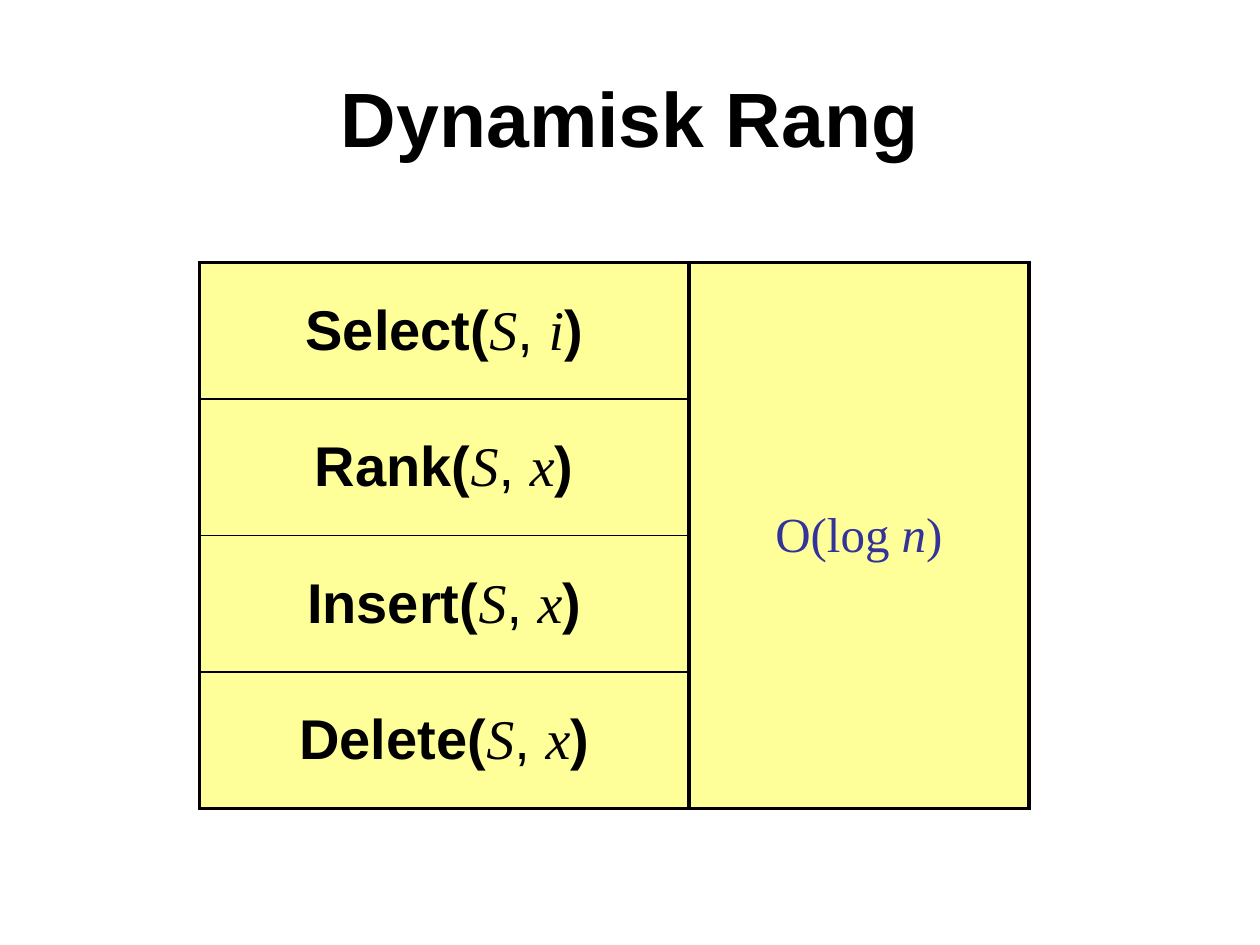
from dataclasses import dataclass

from lxml import etree
from pptx import Presentation
from pptx.dml.color import RGBColor
from pptx.enum import text
from pptx.oxml import ns
from pptx.util import Pt


@dataclass(frozen=True)
class Theme:
    ink: str = "000000"
    accent: str = "333399"
    panel: str = "FFFF99"
    sans: str = "Arial"
    serif: str = "Times New Roman"
    title: float = 44
    operation: float = 32
    bound: float = 28
    outer: float = 2.25
    inner: float = 1


THEME = Theme()
OPERATIONS = [("Select", "i"), ("Rank", "x"), ("Insert", "x"), ("Delete", "x")]


def add_run(p, content, *, size, font=THEME.sans, color=THEME.ink, bold=False, italic=False):
    r = p.add_run()
    r.text = content
    f = r.font
    f.size, f.name, f.bold, f.italic = Pt(size), font, bold, italic
    f.color.rgb = RGBColor.from_string(color)


def set_borders(cell, **widths):
    tc_pr = cell._tc.get_or_add_tcPr()
    for side in "LRTB":
        ln = etree.SubElement(tc_pr, ns.qn(f"a:ln{side}"), w=str(Pt(widths[side])))
        fill = etree.SubElement(ln, ns.qn("a:solidFill"))
        etree.SubElement(fill, ns.qn("a:srgbClr"), val=THEME.ink)


def format_cell(cell, **widths):
    set_borders(cell, **widths)
    cell.fill.solid()
    cell.fill.fore_color.rgb = RGBColor.from_string(THEME.panel)
    cell.vertical_anchor = text.MSO_ANCHOR.MIDDLE
    cell.margin_left = cell.margin_right = Pt(7.2)
    cell.margin_top = cell.margin_bottom = 0
    p = cell.text_frame.paragraphs[0]
    p.alignment = text.PP_ALIGN.CENTER
    return p


def add_title(s, content, x, y, w, h):
    sp = s.shapes.title
    sp.left, sp.top, sp.width, sp.height = Pt(x), Pt(y), Pt(w), Pt(h)
    tf = sp.text_frame
    tf.vertical_anchor = text.MSO_ANCHOR.MIDDLE
    p = tf.paragraphs[0]
    p.alignment = text.PP_ALIGN.CENTER
    add_run(p, content, size=THEME.title, bold=True)


def write_operation(p, name, argument):
    size = THEME.operation
    add_run(p, f"{name}(", size=size, bold=True)
    add_run(p, "S", size=size, font=THEME.serif, italic=True)
    add_run(p, ", ", size=size)
    add_run(p, argument, size=size, font=THEME.serif, italic=True)
    add_run(p, ")", size=size, bold=True)


def write_bound(p):
    for content, italic in [("O(log ", False), ("n", True), (")", False)]:
        add_run(p, content, size=THEME.bound, font=THEME.serif, color=THEME.accent, italic=italic)


def add_operations_table(s, x, y, w, h, name_share):
    count = len(OPERATIONS)
    table = s.shapes.add_table(count, 2, Pt(x), Pt(y), Pt(w), Pt(h)).table
    table.columns[0].width = Pt(w * name_share)
    table.columns[1].width = Pt(w * (1 - name_share))
    table.cell(0, 1).merge(table.cell(count - 1, 1))

    outer, inner = THEME.outer, THEME.inner
    for i, (name, argument) in enumerate(OPERATIONS):
        table.rows[i].height = Pt(h / count)
        top = outer if i == 0 else inner
        bottom = outer if i == count - 1 else inner
        p = format_cell(table.cell(i, 0), L=outer, R=outer, T=top, B=bottom)
        write_operation(p, name, argument)
        p = format_cell(table.cell(i, 1), L=outer, R=outer, T=outer, B=outer)
        if i == 0:
            write_bound(p)


def main():
    prs = Presentation()
    prs.slide_width, prs.slide_height = Pt(720), Pt(540)
    s = prs.slides.add_slide(prs.slide_layouts[5])
    add_title(s, "Dynamisk Rang", 36, 21.6, 648, 90)
    add_operations_table(s, 114, 150, 474, 312, 0.59)
    prs.save("out.pptx")


if __name__ == "__main__":
    main()
